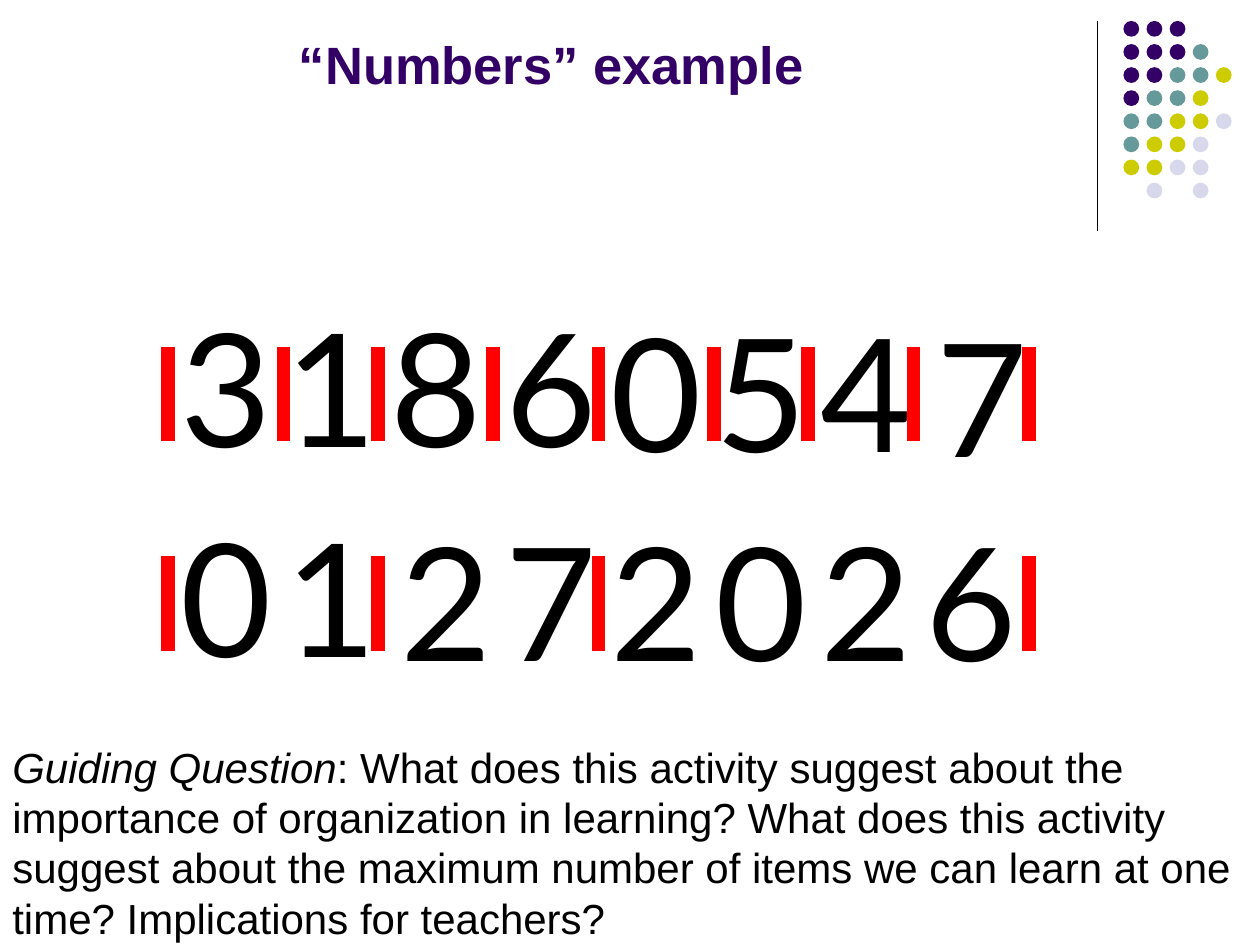
import pptx
import pptx.util
import pptx.dml.color
import pptx.enum.shapes
import pptx.enum.text
import lxml.etree

PX = 7620  # EMU per px, 120 px to the inch
DRAWINGML = "http://schemas.openxmlformats.org/drawingml/2006/main"


def color(hex_string):
    return pptx.dml.color.RGBColor.from_string(hex_string)


def add_vertical_line(x, top, bottom, hex_string, width):
    line = slide.shapes.add_connector(
        pptx.enum.shapes.MSO_CONNECTOR.STRAIGHT, x * PX, top * PX, x * PX, bottom * PX)
    line.line.color.rgb = color(hex_string)
    line.line.width = pptx.util.Pt(width)
    lxml.etree.SubElement(line._element.spPr, "{%s}effectLst" % DRAWINGML)


presentation = pptx.Presentation()
presentation.slide_width = 1200 * PX
presentation.slide_height = 900 * PX
slide = presentation.slides.add_slide(presentation.slide_layouts[6])

# Corner decoration: rule and dot grid
add_vertical_line(1045, 20, 220, "000000", 0.75)
dot_colors = {"P": "330066", "T": "669999", "Y": "CCCC00", "L": "D8D8EC"}
dot_rows = ["PPP", "PPPT", "PPTTY", "PTTY", "TTYYL", "TYYL", "YYLL", " L L"]
for row, dots in enumerate(dot_rows):
    for column, key in enumerate(dots):
        if key in dot_colors:
            dot = slide.shapes.add_shape(
                pptx.enum.shapes.MSO_SHAPE.OVAL,
                (1070 + 22 * column) * PX, (20 + 22 * row) * PX, 15 * PX, 15 * PX)
            dot.shadow.inherit = False
            dot.fill.solid()
            dot.fill.fore_color.rgb = color(dot_colors[key])
            dot.line.fill.background()

# Digits: (digit, left, top, height)
digits = [
    ("3", 160, 270, 375), ("1", 260, 270, 375), ("8", 360, 270, 375), ("6", 470, 270, 375),
    ("0", 570, 275, 375), ("5", 670, 275, 375), ("4", 770, 275, 375), ("7", 880, 280, 375),
    ("0", 160, 470, 195), ("1", 260, 470, 195), ("2", 370, 474, 195), ("7", 470, 474, 195),
    ("2", 570, 474, 375), ("0", 670, 474, 375), ("2", 770, 474, 195), ("6", 870, 474, 195),
]
for digit, left, top, height in digits:
    box = slide.shapes.add_textbox(left * PX, top * PX, 80 * PX, height * PX)
    box.text_frame.word_wrap = True
    box.text_frame.text = digit
    font = box.text_frame.paragraphs[0].runs[0].font
    font.name = "Lato"
    font.size = pptx.util.Pt(90)
    font.color.rgb = color("000000")

# Red separators: single digits above, date groups below
separators = {330: [160, 270, 360, 470, 570, 680, 770, 870, 980], 530: [160, 360, 570, 980]}
for top, positions in separators.items():
    for x in positions:
        add_vertical_line(x, top, top + 90, "FF0000", 8)

# Guiding question
question = slide.shapes.add_textbox(0, 700 * PX, 1200 * PX, 206 * PX)
question.text_frame.word_wrap = True
paragraph = question.text_frame.paragraphs[0]
paragraph.line_spacing = pptx.util.Pt(28.8)
paragraph.add_run().text = "Guiding Question"
paragraph.add_run().text = (
    ": What does this activity suggest about the importance of organization in learning? "
    "What does this activity suggest about the maximum number of items we can learn at one "
    "time? Implications for teachers?")
for run in paragraph.runs:
    run.font.name = "Arial"
    run.font.size = pptx.util.Pt(24)
    run.font.color.rgb = color("000000")
paragraph.runs[0].font.italic = True

# Title
title = slide.shapes.add_textbox(0, 0, 1050 * PX, 96 * PX)
title.text_frame.word_wrap = True
title.text_frame.vertical_anchor = pptx.enum.text.MSO_ANCHOR.BOTTOM
title.text_frame.text = "“Numbers” example"
paragraph = title.text_frame.paragraphs[0]
paragraph.alignment = pptx.enum.text.PP_ALIGN.CENTER
font = paragraph.runs[0].font
font.name = "Arial"
font.size = pptx.util.Pt(30)
font.bold = True
font.color.rgb = color("330066")

presentation.save("out.pptx")
